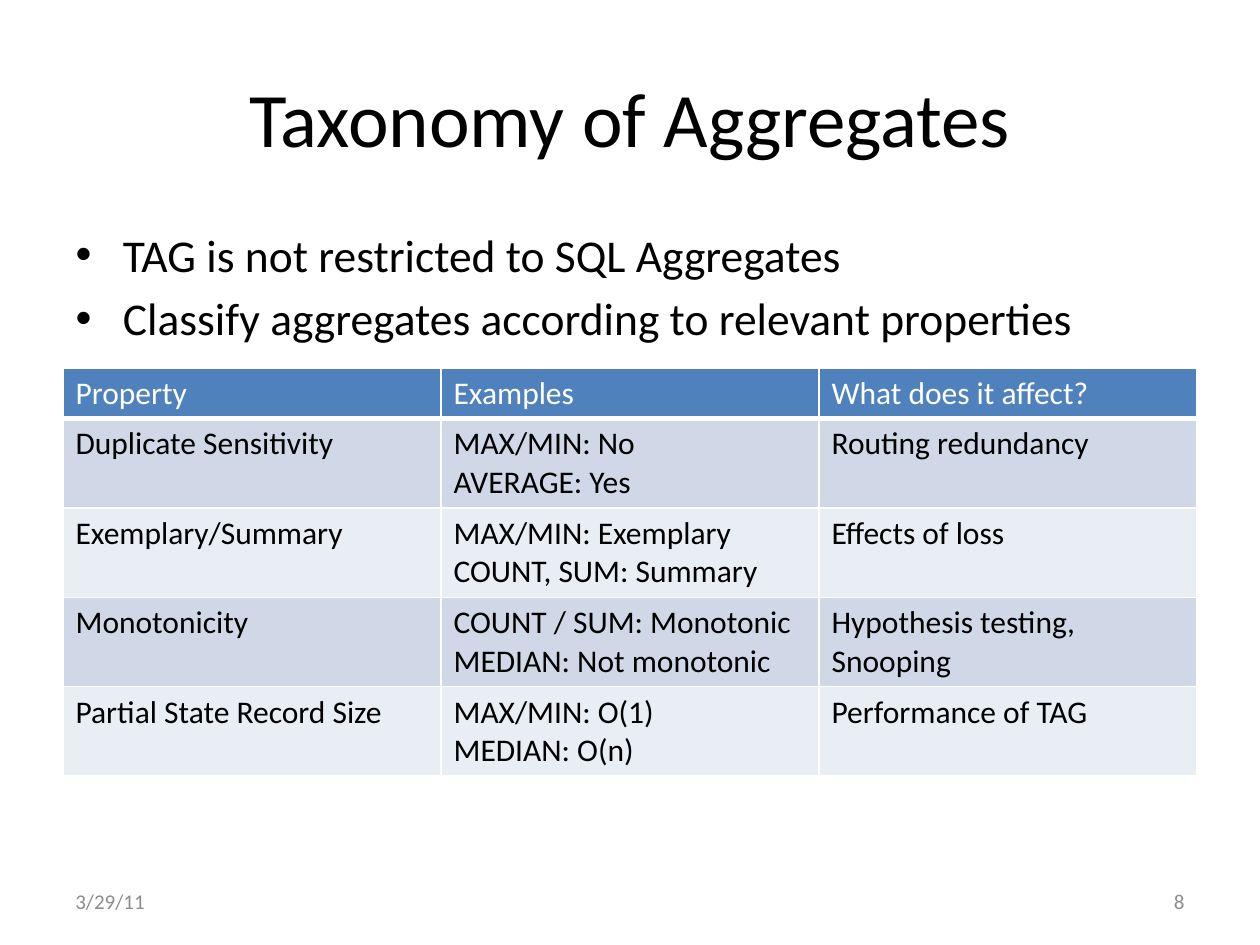
import dataclasses

import lxml.etree
import pptx
import pptx.dml.color
import pptx.enum.text
import pptx.oxml.ns
import pptx.util

Inches = pptx.util.Inches
Align = pptx.enum.text.PP_ALIGN
Anchor = pptx.enum.text.MSO_ANCHOR

FONT = "Calibri"
BLACK, WHITE, GRAY = "000000", "FFFFFF", "8C8C8C"
HEADER_FILL = "4F81BD"
BAND_FILLS = ("D0D8E8", "E9EDF4")
MARGIN = 0.5
HEADER_HEIGHT, ROW_HEIGHT = 0.4, 0.71


@dataclasses.dataclass
class Property:
    name: str
    examples: str
    affects: str


@dataclasses.dataclass
class FooterItem:
    text: str
    left: float
    align: Align


HEADINGS = Property("Property", "Examples", "What does it affect?")
PROPERTIES = [
    Property("Duplicate Sensitivity", "MAX/MIN: No\nAVERAGE: Yes", "Routing redundancy"),
    Property("Exemplary/Summary", "MAX/MIN: Exemplary\nCOUNT, SUM: Summary", "Effects of loss"),
    Property("Monotonicity", "COUNT / SUM: Monotonic\nMEDIAN: Not monotonic", "Hypothesis testing, Snooping"),
    Property("Partial State Record Size", "MAX/MIN: O(1)\nMEDIAN: O(n)", "Performance of TAG"),
]
BULLETS = "TAG is not restricted to SQL Aggregates\nClassify aggregates according to relevant properties"
FOOTER = [
    FooterItem("3/29/11", MARGIN, Align.LEFT),
    FooterItem("8", 7.17, Align.RIGHT),
]


def rgb(color: str) -> pptx.dml.color.RGBColor:
    return pptx.dml.color.RGBColor.from_string(color)


def write(frame, text: str, *, size: float, color: str = BLACK, align=None, anchor=None) -> None:
    frame.text = text
    frame.word_wrap = True
    if anchor is not None:
        frame.vertical_anchor = anchor
    for para in frame.paragraphs:
        para.alignment = align
        for span in para.runs:
            span.font.name = FONT
            span.font.size = pptx.util.Pt(size)
            span.font.color.rgb = rgb(color)


def place(shape, left: float, top: float, width: float, height: float) -> None:
    shape.left, shape.top = Inches(left), Inches(top)
    shape.width, shape.height = Inches(width), Inches(height)


def add_borders(cell, bottom: float) -> None:
    properties = cell._tc.get_or_add_tcPr()
    qn = pptx.oxml.ns.qn
    for side, points in (("L", 1), ("R", 1), ("T", 1), ("B", bottom)):
        line = lxml.etree.SubElement(properties, qn(f"a:ln{side}"), w=str(pptx.util.Pt(points)))
        fill = lxml.etree.SubElement(line, qn("a:solidFill"))
        lxml.etree.SubElement(fill, qn("a:srgbClr"), val=WHITE)


def fill_row(table, index: int, entry: Property) -> None:
    header = index == 0
    table.rows[index].height = Inches(HEADER_HEIGHT if header else ROW_HEIGHT)
    for column, text in enumerate(dataclasses.astuple(entry)):
        cell = table.cell(index, column)
        write(cell.text_frame, text, size=18, color=WHITE if header else BLACK)
        for para in cell.text_frame.paragraphs:
            for span in para.runs:
                span.font.bold = False
        add_borders(cell, 3 if header else 1)
        cell.fill.solid()
        cell.fill.fore_color.rgb = rgb(HEADER_FILL if header else BAND_FILLS[(index - 1) % 2])


def add_property_table(page) -> None:
    rows = [HEADINGS, *PROPERTIES]
    height = HEADER_HEIGHT + ROW_HEIGHT * len(PROPERTIES)
    table = page.shapes.add_table(
        len(rows), 3, Inches(MARGIN), Inches(2.92), Inches(9), Inches(height)
    ).table
    for index, entry in enumerate(rows):
        fill_row(table, index, entry)


def add_footer(page, item: FooterItem) -> None:
    box = page.shapes.add_textbox(Inches(item.left), Inches(6.95), Inches(2.33), Inches(0.4))
    write(box.text_frame, item.text, size=12, color=GRAY, align=item.align, anchor=Anchor.MIDDLE)


def main() -> None:
    deck = pptx.Presentation()
    deck.slide_width, deck.slide_height = Inches(10), Inches(7.5)
    page = deck.slides.add_slide(deck.slide_layouts[1])

    title, body = page.placeholders
    place(title, MARGIN, 0.3, 9, 1.25)
    write(title.text_frame, "Taxonomy of Aggregates", size=44, align=Align.CENTER, anchor=Anchor.MIDDLE)
    place(body, MARGIN, 1.75, 9, 4.95)
    write(body.text_frame, BULLETS, size=26)
    body.text_frame.auto_size = pptx.enum.text.MSO_AUTO_SIZE.NONE

    for item in FOOTER:
        add_footer(page, item)
    add_property_table(page)
    deck.save("out.pptx")


if __name__ == "__main__":
    main()
